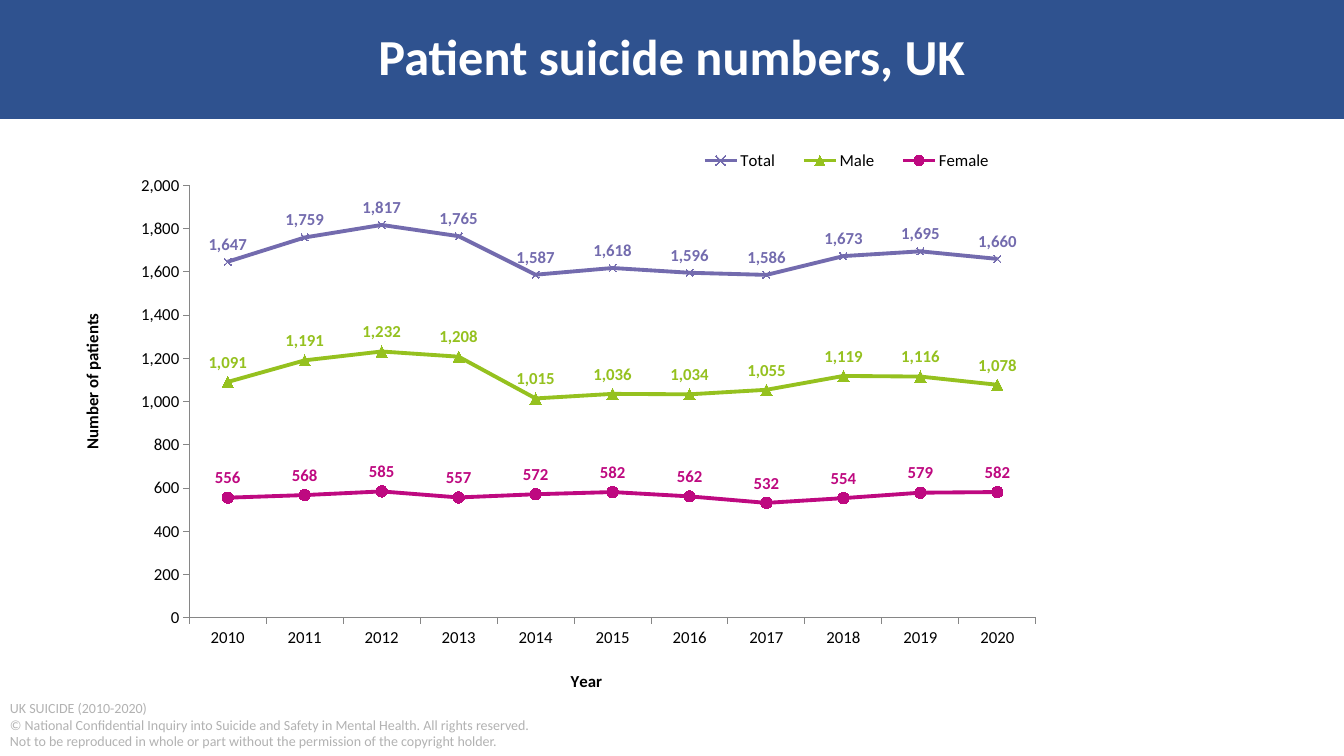
from lxml.etree import SubElement
from pptx import Presentation
from pptx.chart.data import CategoryChartData
from pptx.dml.color import RGBColor
from pptx.enum.chart import XL_CHART_TYPE as ChartType
from pptx.enum.chart import XL_LABEL_POSITION as LabelPosition
from pptx.enum.chart import XL_LEGEND_POSITION as LegendPosition
from pptx.enum.chart import XL_MARKER_STYLE as Marker
from pptx.enum.chart import XL_TICK_MARK as Tick
from pptx.enum.shapes import MSO_SHAPE as Shape
from pptx.enum.text import MSO_ANCHOR as Anchor
from pptx.enum.text import PP_ALIGN as Align
from pptx.oxml.ns import qn
from pptx.util import Pt

FONT = "Calibri"
YEARS = [str(year) for year in range(2010, 2021)]
SERIES = [
    ("Total", "736BAE", Marker.X, 5,
     [1647, 1759, 1817, 1765, 1587, 1618, 1596, 1586, 1673, 1695, 1660]),
    ("Male", "95C11F", Marker.TRIANGLE, 8,
     [1091, 1191, 1232, 1208, 1015, 1036, 1034, 1055, 1119, 1116, 1078]),
    ("Female", "BE0980", Marker.CIRCLE, 8,
     [556, 568, 585, 557, 572, 582, 562, 532, 554, 579, 582]),
]
FOOTER = [
    "UK SUICIDE (2010-2020)",
    "© National Confidential Inquiry into Suicide and Safety in Mental Health. All rights reserved.",
    "Not to be reproduced in whole or part without the permission of the copyright holder.",
]


def color(code):
    """Turn a hex string into a colour."""
    return RGBColor.from_string(code)


def style(font, size, code, bold=False):
    """Set the face, size, colour and weight of a font."""
    font.name, font.size, font.bold = FONT, Pt(size), bold
    font.color.rgb = color(code)


def add_span(para, text, size, code, bold=False):
    """Add one formatted run to a paragraph."""
    span = para.add_run()
    span.text = text
    style(span.font, size, code, bold)


def set_layout(parent, index, inner=False, **fractions):
    """Place a chart part by fractions of the chart area."""
    for old in parent.findall(qn("c:layout")):
        parent.remove(old)
    layout = SubElement(parent, qn("c:layout"))
    parent.insert(index, layout)
    manual = SubElement(layout, qn("c:manualLayout"))
    if inner:
        SubElement(manual, qn("c:layoutTarget")).set("val", "inner")
    for side in "xy":
        SubElement(manual, qn(f"c:{side}Mode")).set("val", "edge")
    for side, value in fractions.items():
        SubElement(manual, qn(f"c:{side}")).set("val", str(value))


def add_banner(page, left, top, width, height):
    """Draw the banner with the slide title centred on it."""
    banner = page.shapes.add_shape(
        Shape.RECTANGLE, Pt(left), Pt(top), Pt(width), Pt(height))
    banner.shadow.inherit = False
    banner.fill.solid()
    banner.fill.fore_color.rgb = color("2F528F")
    banner.line.fill.background()
    title = page.shapes.title
    title.left, title.top = Pt(left), Pt(top + 14.4)
    title.width, title.height = Pt(width), Pt(51)
    title.text_frame.vertical_anchor = Anchor.MIDDLE
    para = title.text_frame.paragraphs[0]
    para.alignment = Align.CENTER
    add_span(para, "Patient suicide numbers, UK", 36, "FFFFFF", True)
    page.shapes._spTree.append(title._element)


def format_axis(axis, text, left, top):
    """Format an axis and place its title."""
    axis.has_major_gridlines = False
    axis.major_tick_mark = Tick.OUTSIDE
    axis.format.line.color.rgb = color("868686")
    axis.format.line.width = Pt(0.75)
    style(axis.tick_labels.font, 12, "000000")
    para = axis.axis_title.text_frame.paragraphs[0]
    add_span(para, text, 12, "000000", True)
    set_layout(axis.axis_title._element, 1, x=left, y=top)


def format_series(series, code, marker, size):
    """Format one line with its markers and value labels."""
    series.smooth = False
    series.format.line.color.rgb = color(code)
    series.format.line.width = Pt(2.75)
    series.marker.style, series.marker.size = marker, size
    series.marker.format.fill.solid()
    series.marker.format.fill.fore_color.rgb = color(code)
    series.marker.format.line.color.rgb = color(code)
    series.marker.format.line.width = Pt(0.75)
    labels = series.data_labels
    labels.show_value = True
    labels.position = LabelPosition.ABOVE
    labels.number_format, labels.number_format_is_linked = "#,##0", False
    style(labels.font, 12, code, True)


def add_line_chart(page, left, top, width, height):
    """Add the chart of patient numbers by year."""
    data = CategoryChartData(number_format="#,##0")
    data.categories = YEARS
    for name, *_, values in SERIES:
        data.add_series(name, values)
    chart = page.shapes.add_chart(
        ChartType.LINE_MARKERS, Pt(left), Pt(top), Pt(width), Pt(height), data).chart
    chart.has_title = False
    style(chart.font, 18, "000000")
    chart.plots[0].vary_by_categories = False
    for series, (_, code, marker, size, _) in zip(chart.plots[0].series, SERIES):
        format_series(series, code, marker, size)
    format_axis(chart.category_axis, "Year", 0.46, 0.94)
    values = chart.value_axis
    format_axis(values, "Number of patients", 0.03, 0.31)
    values.minimum_scale, values.maximum_scale, values.major_unit = 0, 2000, 200
    values.tick_labels.number_format = "#,##0"
    values.tick_labels.number_format_is_linked = False
    chart.has_legend = True
    chart.legend.position = LegendPosition.RIGHT
    chart.legend.include_in_layout = False
    style(chart.legend.font, 12, "000000")
    set_layout(chart.legend._element, 1, x=0.56, y=0.01, w=0.29, h=0.07)
    set_layout(chart._chartSpace.chart.plotArea, 0, inner=True,
               x=0.128, y=0.089, w=0.743, h=0.765)


def add_footer(page, left, top, width, height):
    """Add the source and copyright lines."""
    box = page.shapes.add_textbox(Pt(left), Pt(top), Pt(width), Pt(height))
    frame = box.text_frame
    frame.word_wrap = True
    for index, line in enumerate(FOOTER):
        para = frame.add_paragraph() if index else frame.paragraphs[0]
        add_span(para, line, 10, "B2B2B2")


def main():
    """Build and save the slide."""
    deck = Presentation()
    deck.slide_width, deck.slide_height = Pt(960), Pt(540)
    page = deck.slides.add_slide(deck.slide_layouts[5])
    add_banner(page, 0, 0, 960, 85)
    add_footer(page, 0, 496, 567, 44)
    add_line_chart(page, 31, 96.5, 814, 404)
    deck.save("out.pptx")


if __name__ == "__main__":
    main()
